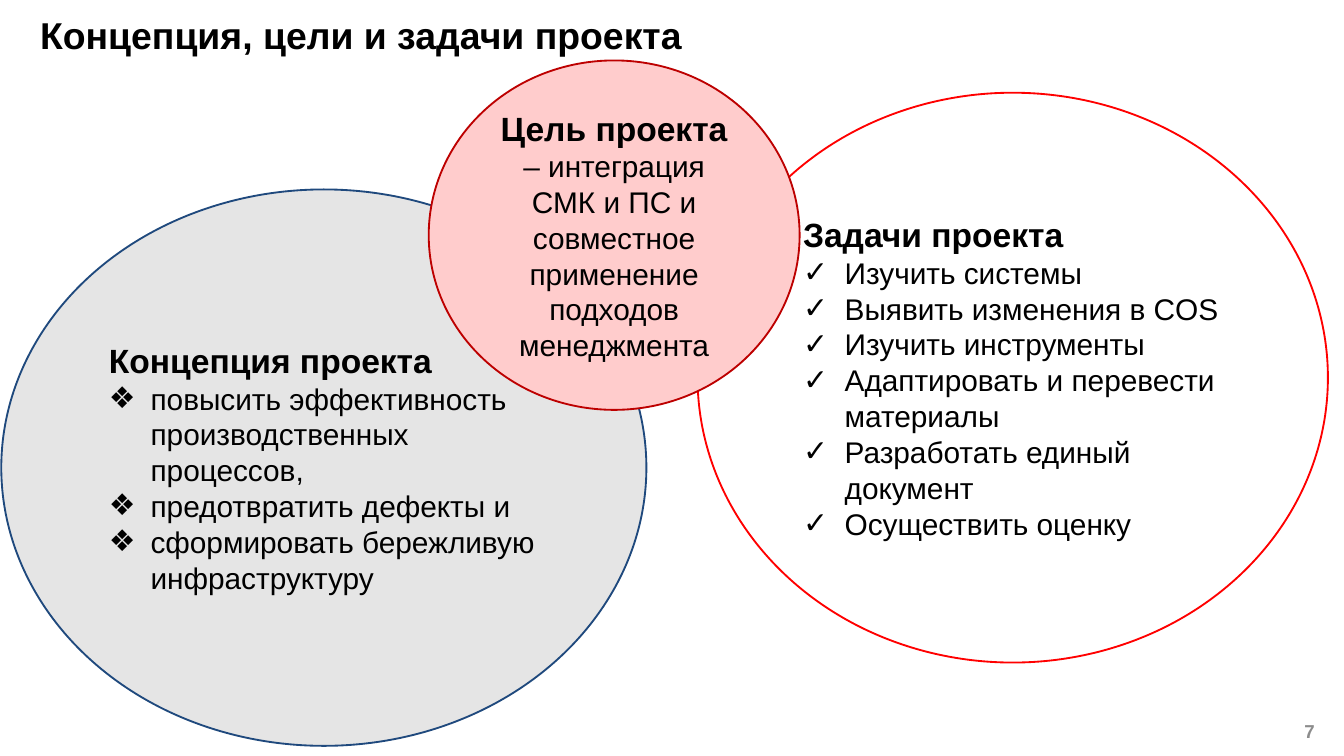
import pptx
import pptx.util
import pptx.dml.color
import pptx.enum.shapes
import pptx.enum.text
import lxml.etree
from pptx.oxml.ns import qn

Inches, Pt = pptx.util.Inches, pptx.util.Pt
Align = pptx.enum.text.PP_ALIGN
Anchor = pptx.enum.text.MSO_ANCHOR

# Content
TITLE = "Концепция, цели и задачи проекта"
PAGE = "7"
CIRCLES = [
    {
        "box": (0.01, 1.41, 4.8, 4.14), "look": "plan",
        "head": "Концепция проекта", "mark": "❖",
        "items": [
            "повысить эффективность производственных процессов,",
            "предотвратить дефекты и",
            "сформировать бережливую инфраструктуру",
        ],
    },
    {
        "box": (5.19, 0.69, 4.69, 4.24), "look": "tasks",
        "head": "Задачи проекта", "mark": "✓",
        "items": [
            "Изучить системы",
            "Выявить изменения в COS",
            "Изучить инструменты",
            "Адаптировать и перевести материалы",
            "Разработать единый документ",
            "Осуществить оценку",
        ],
    },
    {
        "box": (3.19, 0.45, 2.76, 2.6), "look": "goal",
        "head": "Цель проекта ",
        "tail": "– интеграция СМК и ПС и совместное применение подходов менеджмента",
    },
]

# Theme: looks are (fill, line)
THEME = {
    "font": "Arial", "ink": "000000", "pale": "8C8C8C",
    "title": 20, "head": 18, "body": 16, "page": 10,
    "plan": ("E5E5E5", "1F497D"),
    "tasks": ("FFFFFF", "FF0000"),
    "goal": ("FFCCCC", "BD0000"),
}
INDENT = Inches(0.31)


def color(name):
    return pptx.dml.color.RGBColor.from_string(name)


def add_run(para, text, size, bold=False, ink="ink"):
    run = para.add_run()
    run.text = text
    run.font.name = THEME["font"]
    run.font.size = Pt(THEME[size])
    run.font.bold = bold
    run.font.color.rgb = color(THEME[ink])


def add_mark(para, mark):
    props = para._p.get_or_add_pPr()
    props.set("marL", str(INDENT))
    props.set("indent", str(-INDENT))
    font = lxml.etree.SubElement(props, qn("a:buFont"))
    font.set("typeface", THEME["font"])
    lxml.etree.SubElement(props, qn("a:buChar")).set("char", mark)


def add_label(slide, box, text, size, ink, align, anchor):
    frame = slide.shapes.add_textbox(*map(Inches, box)).text_frame
    frame.word_wrap = True
    frame.vertical_anchor = anchor
    para = frame.paragraphs[0]
    para.alignment = align
    add_run(para, text, size, True, ink)


def add_circle(slide, part):
    kind = pptx.enum.shapes.MSO_SHAPE.FLOWCHART_CONNECTOR
    shape = slide.shapes.add_shape(kind, *map(Inches, part["box"]))
    fill, line = THEME[part["look"]]
    shape.shadow.inherit = False
    shape.fill.solid()
    shape.fill.fore_color.rgb = color(fill)
    shape.line.color.rgb = color(line)
    shape.line.width = Pt(1)

    frame = shape.text_frame
    frame.word_wrap = True
    frame.vertical_anchor = Anchor.MIDDLE
    para = frame.paragraphs[0]
    para.alignment = Align.CENTER if "tail" in part else Align.LEFT
    add_run(para, part["head"], "head", True)
    if "tail" in part:
        add_run(para, part["tail"], "body")
    for item in part.get("items", []):
        para = frame.add_paragraph()
        para.alignment = Align.LEFT
        add_mark(para, part["mark"])
        add_run(para, item, "body")


def main():
    deck = pptx.Presentation()
    # Widescreen, 16 by 9
    deck.slide_width = Inches(10)
    deck.slide_height = Inches(10 * 9 / 16)
    slide = deck.slides.add_slide(deck.slide_layouts[6])

    # Title and page number
    add_label(slide, (0.2, 0.04, 8.27, 0.3), TITLE, "title", "ink",
              Align.LEFT, Anchor.TOP)
    add_label(slide, (9.57, 5.33, 0.31, 0.22), PAGE, "page", "pale",
              Align.RIGHT, Anchor.MIDDLE)

    # Circles, back to front
    for part in CIRCLES:
        add_circle(slide, part)

    deck.save("out.pptx")


if __name__ == "__main__":
    main()
